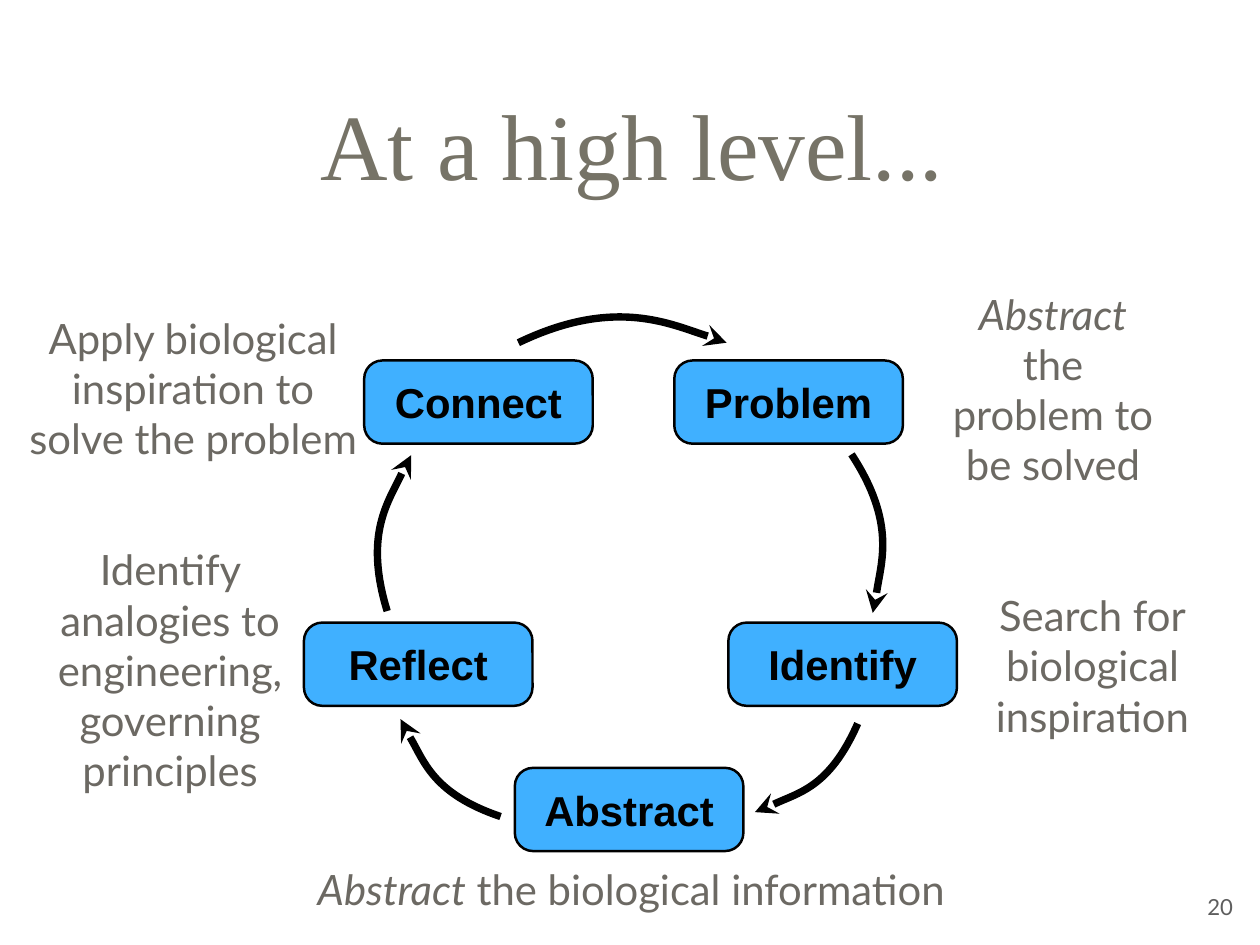
from dataclasses import dataclass

from lxml.etree import SubElement
from pptx import Presentation
from pptx.dml.color import RGBColor
from pptx.enum.shapes import MSO_SHAPE
from pptx.enum.text import MSO_ANCHOR, PP_ALIGN
from pptx.oxml.ns import qn
from pptx.util import Inches, Pt


@dataclass(frozen=True)
class Theme:
    title_color: RGBColor = RGBColor(0x76, 0x73, 0x67)
    note_color: RGBColor = RGBColor(0x6C, 0x69, 0x63)
    number_color: RGBColor = RGBColor(0x5E, 0x5E, 0x5E)
    step_fill: RGBColor = RGBColor(0x00, 0x96, 0xFF)
    black: RGBColor = RGBColor(0, 0, 0)
    title_font: str = "Times New Roman"
    note_font: str = "Lato"
    step_font: str = "Arial"
    title_size: Pt = Pt(76)
    body_size: Pt = Pt(34)
    number_size: Pt = Pt(18)
    step_line: Pt = Pt(2)
    arrow_line: Pt = Pt(6)


theme = Theme()


def set_text(shape, paragraphs, font, size, color, anchor=MSO_ANCHOR.MIDDLE):
    """Write centred paragraphs, each a list of (text, italic) runs."""
    frame = shape.text_frame
    frame.word_wrap = True
    frame.vertical_anchor = anchor
    frame.margin_left = frame.margin_right = Inches(0.06)
    frame.margin_top = frame.margin_bottom = Inches(0.06)
    for index, runs in enumerate(paragraphs):
        paragraph = frame.add_paragraph() if index else frame.paragraphs[0]
        paragraph.alignment = PP_ALIGN.CENTER
        paragraph.font.name = font
        paragraph.font.size = size
        paragraph.font.color.rgb = color
        for text, italic in runs:
            run = paragraph.add_run()
            run.text = text
            if italic:
                run.font.italic = True


presentation = Presentation()
presentation.slide_width = Inches(14.22)
presentation.slide_height = Inches(10.67)
slide = presentation.slides.add_slide(presentation.slide_layouts[6])
shapes = slide.shapes

title = shapes.add_textbox(Inches(0.88), Inches(0.28), Inches(12.5), Inches(2.67))
set_text(title, [[("At a high level...", False)]],
         theme.title_font, theme.title_size, theme.title_color)

number = shapes.add_textbox(Inches(13.52), Inches(10.03), Inches(0.5), Inches(0.42))
set_text(number, [[("20", False)]], theme.note_font, theme.number_size,
         theme.number_color, MSO_ANCHOR.TOP)

# Steps of the cycle: left, top
steps = {
    "Identify": (8.22, 7.03),
    "Abstract": (5.81, 8.67),
    "Reflect": (3.43, 7.03),
    "Connect": (4.11, 4.07),
    "Problem": (7.61, 4.07),
}
for name, (left, top) in steps.items():
    step = shapes.add_shape(MSO_SHAPE.ROUNDED_RECTANGLE, Inches(left), Inches(top),
                            Inches(2.58), Inches(0.94))
    step.adjustments[0] = 0.22
    step.shadow.inherit = False
    step.fill.solid()
    step.fill.fore_color.rgb = theme.step_fill
    fill_color = step.fill._xPr.find(qn("a:solidFill")).find(qn("a:srgbClr"))
    SubElement(fill_color, qn("a:alpha"), val="75000")
    step.line.color.rgb = theme.black
    step.line.width = theme.step_line
    set_text(step, [[(name, False)]], theme.step_font, theme.body_size, theme.black)
    step.text_frame.paragraphs[0].font.bold = True

# Curved arrows: start, control point, end
arrows = [
    ((5.85, 3.87), (6.95, 3.34), (8.2, 3.87)),
    ((9.61, 5.13), (10.12, 5.91), (9.85, 6.92)),
    ((9.68, 8.17), (9.36, 8.9), (8.52, 9.17)),
    ((5.65, 9.22), (4.88, 8.96), (4.52, 8.12)),
    ((4.37, 6.9), (4.1, 6.02), (4.64, 5.14)),
]
for points in arrows:
    start, control, end = [(Inches(x), Inches(y)) for x, y in points]
    builder = shapes.build_freeform(*start)
    builder.add_line_segments([control, end], close=False)
    arrow = builder.convert_to_shape()
    arrow.shadow.inherit = False
    arrow.fill.background()
    arrow.line.color.rgb = theme.black
    arrow.line.width = theme.arrow_line
    SubElement(arrow.line._get_or_add_ln(), qn("a:tailEnd"), type="stealth")

    # Turn the two straight segments into one Bézier curve
    outline = next(arrow._element.iter(qn("a:path")))
    curve = SubElement(outline, qn("a:cubicBezTo"))
    for segment in outline.findall(qn("a:lnTo")):
        curve.append(segment[0])
        outline.remove(segment)
    SubElement(curve, qn("a:pt"), dict(curve[-1].attrib))

# Notes around the cycle: left, top, width, height, paragraphs
notes = [
    (10.65, 3.48, 2.47, 1.82,
     [[("Abstract", True), (" the", False)], [("problem to", False)],
      [("be solved", False)]]),
    (11.08, 6.6, 2.5, 1.82,
     [[("Search for", False)], [("biological", False)], [("inspiration", False)]]),
    (0.39, 6.08, 3.06, 2.96,
     [[("Identify analogies to engineering, governing principles", False)]]),
    (0.21, 3.47, 3.94, 1.82,
     [[("Apply biological inspiration to", False)], [("solve the problem", False)]]),
    (1.14, 9.7, 11.97, 0.68,
     [[("Abstract", True), (" the biological information", False)]]),
]
for left, top, width, height, paragraphs in notes:
    note = shapes.add_textbox(Inches(left), Inches(top), Inches(width), Inches(height))
    set_text(note, paragraphs, theme.note_font, theme.body_size, theme.note_color)

presentation.save("out.pptx")
